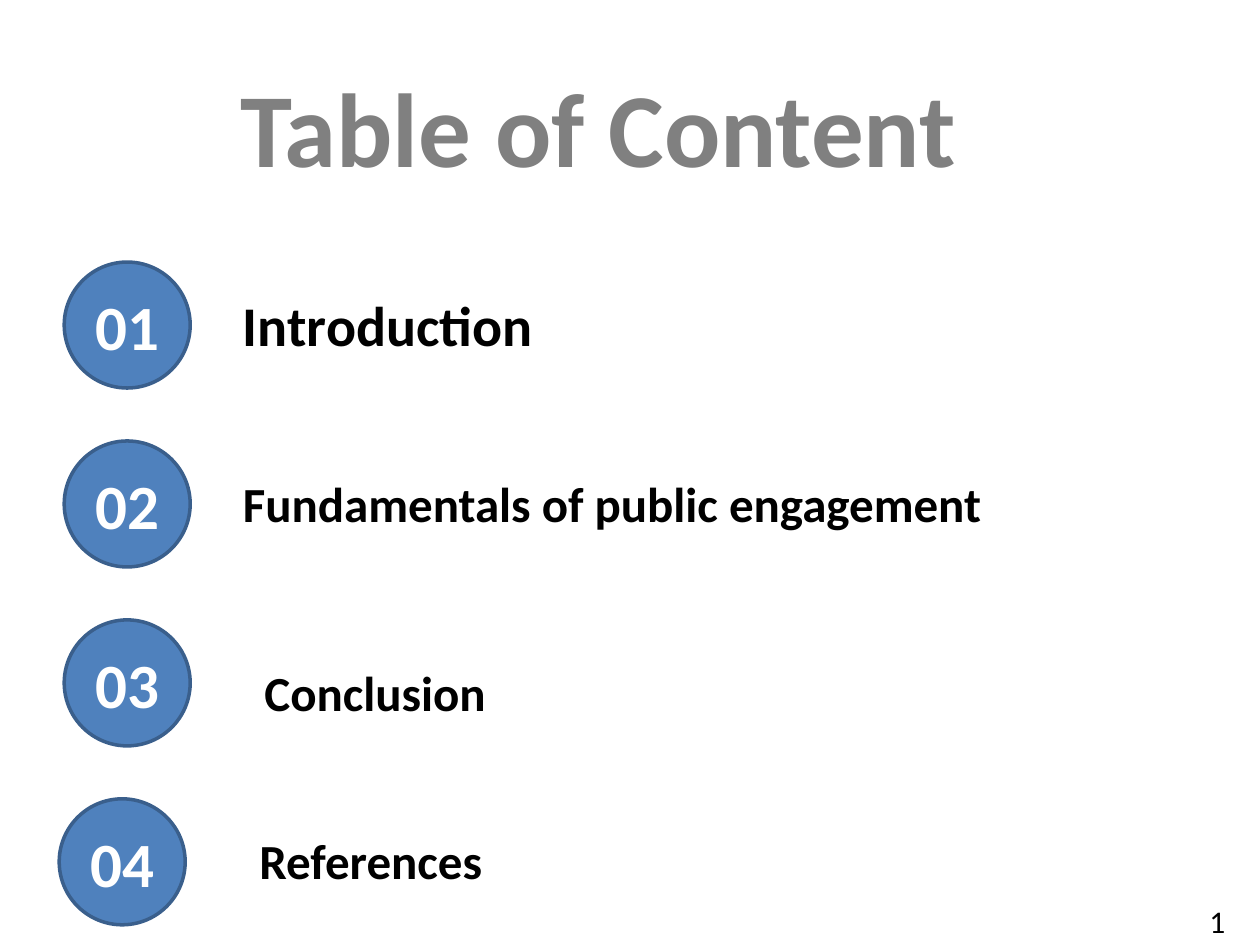
from dataclasses import dataclass

from pptx import Presentation
from pptx.dml.color import RGBColor
from pptx.enum.shapes import MSO_SHAPE
from pptx.enum.text import MSO_ANCHOR, PP_ALIGN
from pptx.util import Inches, Pt

EMU_PER_PX = Inches(1) // 100


def px(length):
    return length * EMU_PER_PX


@dataclass(frozen=True)
class Theme:
    font: str = "Calibri"
    title_color: RGBColor = RGBColor(0x80, 0x80, 0x80)
    text_color: RGBColor = RGBColor(0x00, 0x00, 0x00)
    badge_fill: RGBColor = RGBColor(0x4F, 0x81, 0xBD)
    badge_line: RGBColor = RGBColor(0x3A, 0x5F, 0x8C)
    badge_text: RGBColor = RGBColor(0xFF, 0xFF, 0xFF)
    title_size: int = 60
    badge_size: int = 36
    lead_size: int = 32
    entry_size: int = 28
    page_size: int = 18
    badge_line_width: int = 2


class SlideBuilder:
    def __init__(self, slide, theme):
        self.slide = slide
        self.theme = theme

    def set_text(self, shape, text, size, color, bold=True, align=PP_ALIGN.LEFT):
        shape.text_frame.text = text
        paragraph = shape.text_frame.paragraphs[0]
        paragraph.alignment = align
        font = paragraph.runs[0].font
        font.name = self.theme.font
        font.size = Pt(size)
        font.bold = bold
        font.color.rgb = color

    def title(self, text, left, top, width, height):
        box = self.slide.shapes.add_textbox(px(left), px(top), px(width), px(height))
        box.text_frame.word_wrap = True
        box.text_frame.vertical_anchor = MSO_ANCHOR.MIDDLE
        self.set_text(box, text, self.theme.title_size, self.theme.title_color,
                      align=PP_ALIGN.CENTER)

    def badge(self, text, left, top, diameter):
        """Add a numbered circle."""
        circle = self.slide.shapes.add_shape(
            MSO_SHAPE.OVAL, px(left), px(top), px(diameter), px(diameter))
        circle.shadow.inherit = False
        circle.fill.solid()
        circle.fill.fore_color.rgb = self.theme.badge_fill
        circle.line.color.rgb = self.theme.badge_line
        circle.line.width = Pt(self.theme.badge_line_width)
        frame = circle.text_frame
        frame.margin_left = frame.margin_right = 0
        frame.vertical_anchor = MSO_ANCHOR.MIDDLE
        self.set_text(circle, text, self.theme.badge_size, self.theme.badge_text,
                      align=PP_ALIGN.CENTER)

    def label(self, text, left, top, width, height, size, bold=True):
        box = self.slide.shapes.add_textbox(px(left), px(top), px(width), px(height))
        box.text_frame.word_wrap = False
        self.set_text(box, text, size, self.theme.text_color, bold)


def main():
    presentation = Presentation()
    presentation.slide_width = px(1000)
    presentation.slide_height = px(750)
    slide = presentation.slides.add_slide(presentation.slide_layouts[6])
    theme = Theme()
    builder = SlideBuilder(slide, theme)

    builder.title("Table of Content", 25, 37, 900, 125)

    first_top, pitch, diameter = 208, 142, 100
    # badge left, label text, then label left, top, width, height and type size
    entries = [
        (51, "Introduction", 183, 226, 253, 64, theme.lead_size),
        (51, "Fundamentals of public engagement", 183, 371, 613, 57, theme.entry_size),
        (51, "Conclusion", 200, 521, 198, 57, theme.entry_size),
        (47, "References", 196, 654, 199, 57, theme.entry_size),
    ]
    for index, (badge_left, *label) in enumerate(entries):
        builder.badge(f"{index + 1:02d}", badge_left, first_top + index * pitch, diameter)
        builder.label(*label)

    builder.label("1", 950, 711, 33, 40, theme.page_size, bold=False)
    presentation.save("out.pptx")


if __name__ == "__main__":
    main()
